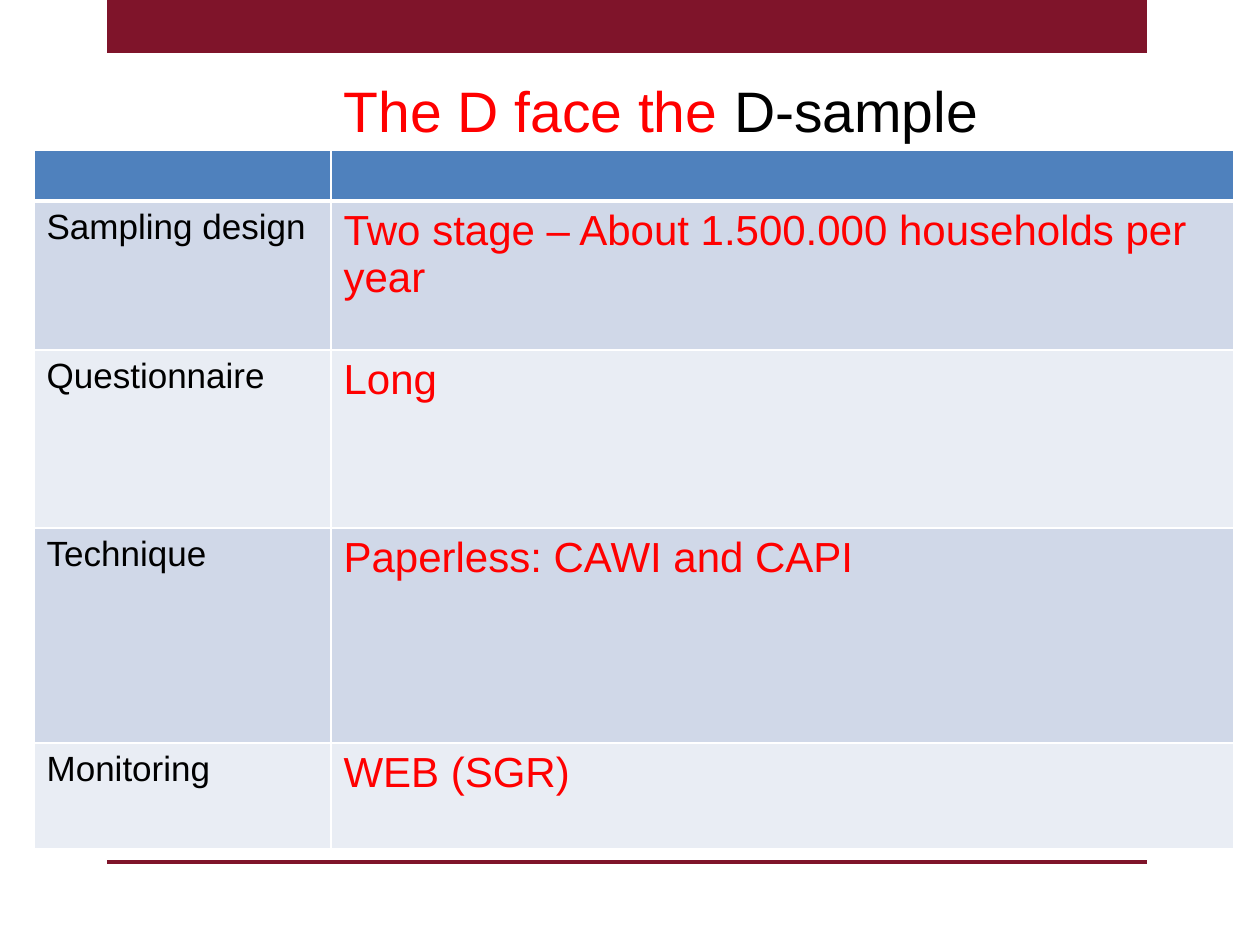
from lxml.etree import SubElement
from pptx import Presentation
from pptx.dml.color import RGBColor
from pptx.enum.shapes import MSO_CONNECTOR, MSO_SHAPE
from pptx.enum.text import MSO_ANCHOR, MSO_AUTO_SIZE, PP_ALIGN
from pptx.oxml import parse_xml
from pptx.oxml.ns import nsdecls, qn
from pptx.util import Emu, Pt

COLORS = {
    "maroon": "7F142A", "red": "FF0000", "black": "000000", "white": "FFFFFF",
    "header": "4F81BD", "band_dark": "D0D8E8", "band_light": "E9EDF4",
}
TITLE = [("The D face the ", "red"), ("D-sample", "black")]
ROWS = [
    ("", ""),
    ("Sampling design", "Two stage – About 1.500.000 households per year"),
    ("Questionnaire", "Long"),
    ("Technique", "Paperless: CAWI and CAPI"),
    ("Monitoring", "WEB (SGR)"),
]
ROW_HEIGHTS = [51, 149, 178, 215, 106]
COLUMN_WIDTHS = [297, 903]
COLUMN_FORMATS = [{"size": 20, "color": "black"}, {"size": 24, "color": "red"}]
TABLE_LEFT, TABLE_TOP = 34, 150
BAND_LEFT, BAND_RIGHT, BAND_HEIGHT, RULE_Y = 107, 1147, 53, 862


def px(length):
    return Emu(round(length * 914400 / 126))


def rgb(name):
    return RGBColor.from_string(COLORS[name])


def add_text(paragraph, text, size, color, font="Arial"):
    run = paragraph.add_run()
    run.text = text
    run.font.name = font
    run.font.size = Pt(size)
    run.font.color.rgb = rgb(color)


def set_borders(cell, widths):
    properties = cell._tc.get_or_add_tcPr()
    for position, (side, width) in enumerate(widths.items()):
        properties.insert(position, parse_xml(
            f'<a:ln{side} {nsdecls("a")} w="{Pt(width)}"><a:solidFill>'
            f'<a:srgbClr val="{COLORS["white"]}"/></a:solidFill></a:ln{side}>'))


presentation = Presentation()
presentation.slide_width, presentation.slide_height = px(1260), px(945)
slide = presentation.slides.add_slide(presentation.slide_layouts[5])

top_band = slide.shapes.add_shape(
    MSO_SHAPE.RECTANGLE, px(BAND_LEFT), 0, px(BAND_RIGHT - BAND_LEFT), px(BAND_HEIGHT))
top_band.shadow.inherit = False
top_band.fill.solid()
top_band.fill.fore_color.rgb = rgb("maroon")
top_band.line.fill.background()

bottom_rule = slide.shapes.add_connector(
    MSO_CONNECTOR.STRAIGHT, px(BAND_LEFT), px(RULE_Y), px(BAND_RIGHT), px(RULE_Y))
bottom_rule.line.color.rgb = rgb("maroon")
bottom_rule.line.width = Pt(2)
SubElement(bottom_rule._element.spPr, qn("a:effectLst"))

title = slide.shapes.title
title.left, title.top, title.width, title.height = px(94), px(63), px(1134), px(94)
title.text_frame.auto_size = MSO_AUTO_SIZE.NONE
title.text_frame.vertical_anchor = MSO_ANCHOR.MIDDLE
title_line = title.text_frame.paragraphs[0]
title_line.alignment = PP_ALIGN.CENTER
for text, color in TITLE:
    add_text(title_line, text, size=32.6, color=color)

survey = slide.shapes.add_table(
    len(ROWS), len(COLUMN_WIDTHS), px(TABLE_LEFT), px(TABLE_TOP),
    px(sum(COLUMN_WIDTHS)), px(sum(ROW_HEIGHTS))).table
for column, width in zip(survey.columns, COLUMN_WIDTHS):
    column.width = px(width)
for r, (texts, height) in enumerate(zip(ROWS, ROW_HEIGHTS)):
    survey.rows[r].height = px(height)
    band = "header" if r == 0 else ("band_light", "band_dark")[r % 2]
    for c, (text, text_format) in enumerate(zip(texts, COLUMN_FORMATS)):
        cell = survey.cell(r, c)
        cell.fill.solid()
        cell.fill.fore_color.rgb = rgb(band)
        set_borders(cell, {"L": 1, "R": 1, "T": 3 if r == 1 else 1, "B": 3 if r == 0 else 1})
        if text:
            add_text(cell.text_frame.paragraphs[0], text, **text_format)

presentation.save("out.pptx")
